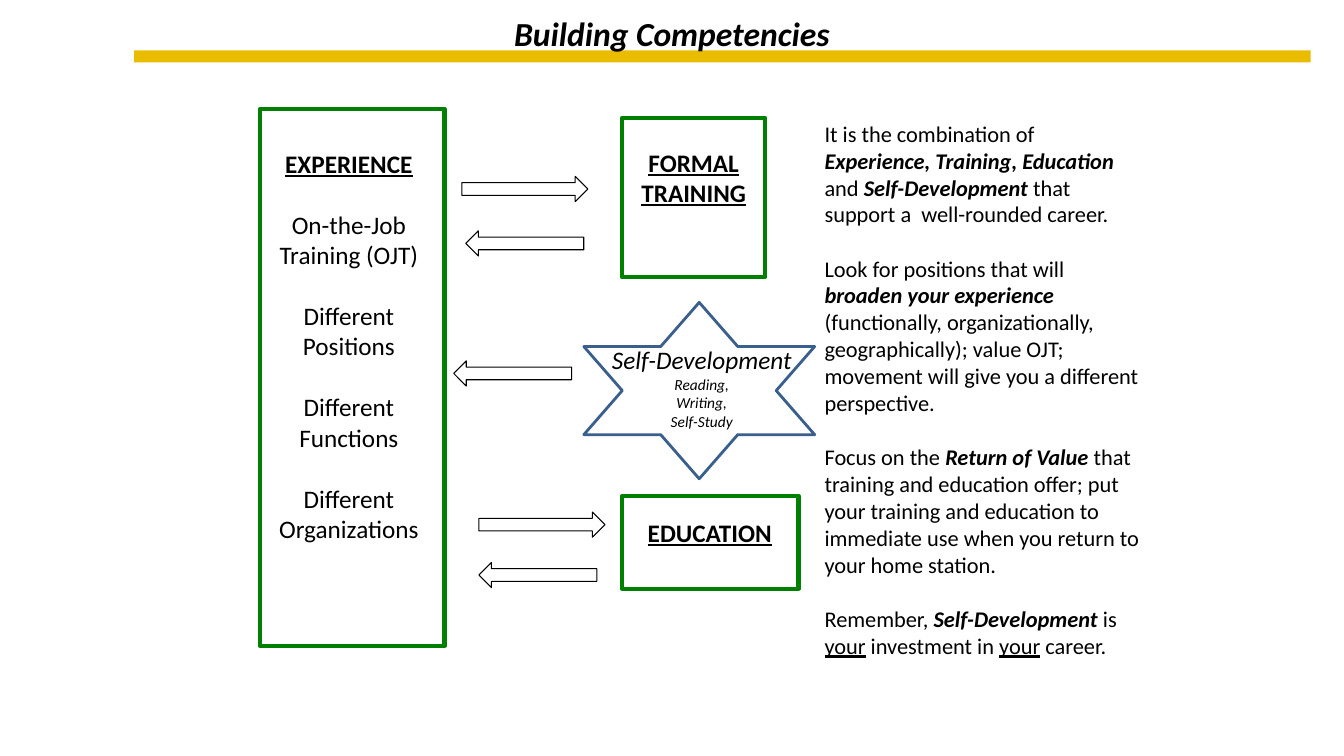
from dataclasses import dataclass

from pptx import Presentation
from pptx.dml.color import RGBColor
from pptx.enum.shapes import MSO_SHAPE as Shape
from pptx.enum.text import MSO_ANCHOR as Anchor, PP_ALIGN as Align
from pptx.util import Inches, Pt


@dataclass(frozen=True)
class Theme:
    font: str = "Calibri"
    text: RGBColor = RGBColor(0, 0, 0)
    gold: RGBColor = RGBColor(0xEA, 0xBC, 0x00)
    green: RGBColor = RGBColor(0, 0x80, 0)
    blue: RGBColor = RGBColor(0x3A, 0x5F, 0x8C)
    title: float = 24
    label: float = 18
    body: float = 16
    small: float = 11
    label_gap: float = 22
    body_gap: float = 19.5


theme = Theme()
PLAIN = {}
ITALIC = {"italic": True}
STRONG = {"bold": True, "italic": True}
HEADING = {"bold": True, "underline": True}
UNDERLINE = {"underline": True}

TITLE = [[("Building Competencies", STRONG)]]
TITLE_BOX = (2.75, 0.08, 7.83, 0.5)
BAR_BOX = (1.33, 0.5, 11.67, 0.12)

EXPERIENCE = [
    [("EXPERIENCE", HEADING)],
    [("On-the-Job Training (OJT)", PLAIN)],
    [("Different Positions", PLAIN)],
    [("Different Functions", PLAIN)],
    [("Different Organizations", PLAIN)],
]
PANELS = [
    ((2.58, 1.08, 1.83, 5.33), (2.5, 1.42, 1.92, 4.64), EXPERIENCE),
    ((6.17, 1.17, 1.42, 1.58), (5.92, 1.41, 1.92, 1.01),
     [[("FORMAL TRAINING", HEADING)]]),
    ((6.17, 4.92, 1.75, 0.92), (6.08, 5.08, 1.92, 0.4),
     [[("EDUCATION", HEADING)]]),
]

ARROW_HEIGHT = 0.25
ARROW_WIDTHS = {Shape.RIGHT_ARROW: 1.25, Shape.LEFT_ARROW: 1.17}
ARROWS = [
    (Shape.RIGHT_ARROW, 4.58, 1.75),
    (Shape.RIGHT_ARROW, 4.75, 5.08),
    (Shape.LEFT_ARROW, 4.62, 2.29),
    (Shape.LEFT_ARROW, 4.75, 5.58),
    (Shape.LEFT_ARROW, 4.5, 3.58),
]

ADVICE_BOX = (8.08, 1.14, 3.33, 6.02)
ADVICE = [
    [("It is the combination of ", PLAIN),
     ("Experience, Training, Education", STRONG), (" and ", PLAIN),
     ("Self-Development ", STRONG),
     ("that support a  well-rounded career.", PLAIN)],
    [("Look for positions that will ", PLAIN),
     ("broaden your experience ", STRONG),
     ("(functionally, organizationally, geographically); value OJT; "
      "movement will give you a different perspective.", PLAIN)],
    [("Focus on the ", PLAIN), ("Return of Value ", STRONG),
     ("that training and education offer; put your training and education "
      "to immediate use when you return to your home station.", PLAIN)],
    [("Remember, ", PLAIN), ("Self-Development ", STRONG), ("is ", PLAIN),
     ("your", UNDERLINE), (" investment in ", PLAIN),
     ("your", UNDERLINE), (" career.", PLAIN)],
]

STAR_BOX = (5.79, 3, 2.29, 1.75)
STAR_TEXT_BOX = (5.75, 3.37, 2.42, 0.96)
SMALL = {"italic": True, "size": Pt(theme.small)}
STAR_TEXT = [
    [("Self-Development", ITALIC)],
    [("Reading,", SMALL)],
    [("Writing,", SMALL)],
    [("Self-Study", SMALL)],
]


def inches(box):
    return [Inches(value) for value in box]


def write(frame, paragraphs, size, align, gap=0):
    frame.word_wrap = True
    for index, runs in enumerate(paragraphs):
        paragraph = frame.add_paragraph() if index else frame.paragraphs[0]
        paragraph.alignment = align
        paragraph.space_before = Pt(gap if index else 0)
        for text, style in runs:
            run = paragraph.add_run()
            run.text = text
            run.font.color.rgb = theme.text
            values = {"name": theme.font, "size": Pt(size), "bold": False,
                      "italic": False, **style}
            for name, value in values.items():
                setattr(run.font, name, value)


def add_text(shapes, box, paragraphs, size, align=Align.CENTER, gap=0):
    text_box = shapes.add_textbox(*inches(box))
    write(text_box.text_frame, paragraphs, size, align, gap)


def add_outline(shapes, kind, box, color, width):
    shape = shapes.add_shape(kind, *inches(box))
    shape.shadow.inherit = False
    shape.fill.background()
    shape.line.color.rgb = color
    shape.line.width = Pt(width)
    return shape


def add_title(slide):
    title = slide.shapes.title
    title.left, title.top, title.width, title.height = inches(TITLE_BOX)
    title.text_frame.vertical_anchor = Anchor.MIDDLE
    write(title.text_frame, TITLE, theme.title, Align.CENTER)
    bar = slide.shapes.add_shape(Shape.RECTANGLE, *inches(BAR_BOX))
    bar.shadow.inherit = False
    bar.fill.solid()
    bar.fill.fore_color.rgb = theme.gold
    bar.line.fill.background()
    title.element.addprevious(bar.element)


def main():
    presentation = Presentation()
    presentation.slide_width = Inches(13.33)
    presentation.slide_height = Inches(7.5)
    slide = presentation.slides.add_slide(presentation.slide_layouts[5])
    shapes = slide.shapes

    add_title(slide)
    for frame_box, text_box, paragraphs in PANELS:
        add_outline(shapes, Shape.RECTANGLE, frame_box, theme.green, 3)
        add_text(shapes, text_box, paragraphs, theme.label,
                 gap=theme.label_gap)
    for kind, left, top in ARROWS:
        box = (left, top, ARROW_WIDTHS[kind], ARROW_HEIGHT)
        add_outline(shapes, kind, box, theme.text, 0.75)
    add_text(shapes, ADVICE_BOX, ADVICE, theme.body, Align.LEFT,
             theme.body_gap)
    add_text(shapes, STAR_TEXT_BOX, STAR_TEXT, theme.label)
    add_outline(shapes, Shape.STAR_6_POINT, STAR_BOX, theme.blue, 2)

    presentation.save("out.pptx")


if __name__ == "__main__":
    main()
